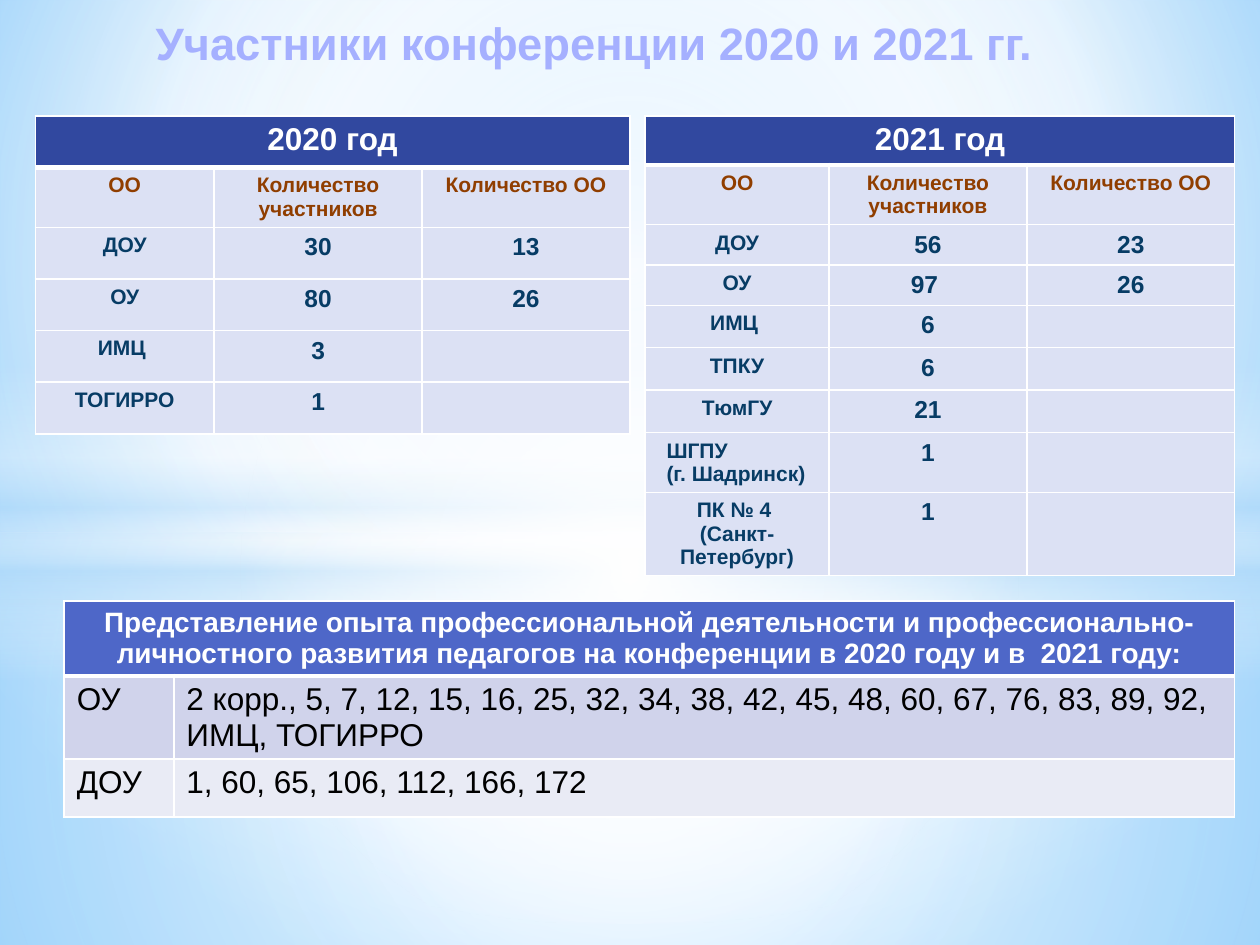
"""Builds the slide that compares conference participants in 2020 and 2021."""
from lxml import etree
from pptx import Presentation
from pptx.dml.color import RGBColor
from pptx.enum.shapes import MSO_SHAPE
from pptx.enum.text import MSO_ANCHOR, PP_ALIGN
from pptx.oxml import parse_xml
from pptx.oxml.ns import nsdecls, qn
from pptx.util import Inches, Pt

RECTANGLE, OVAL = MSO_SHAPE.RECTANGLE, MSO_SHAPE.OVAL
LEFT, CENTER = PP_ALIGN.LEFT, PP_ALIGN.CENTER
TOP, MIDDLE, BOTTOM = MSO_ANCHOR.TOP, MSO_ANCHOR.MIDDLE, MSO_ANCHOR.BOTTOM

COLORS = {
    "white": "FFFFFF", "black": "000000", "sky": "B4DCFA",
    "light_blue": "9ED5FF", "bright_blue": "5BB9FF", "title": "A5B0FF",
    "year": "31489F", "cell": "DCE1F4", "heading": "903E00", "value": "073C65",
    "summary": "4E67C8", "band_dark": "D0D3EB", "band_light": "E9EBF5",
}
CENTERED = (50, 50, 50, 50)


class SlideBuilder:
    """Holds the style and the current slide and adds each kind of element."""

    def __init__(self, presentation, font_name):
        self.font_name = font_name
        self.slide = presentation.slides.add_slide(presentation.slide_layouts[5])

    def gradient(self, stops, focus=None):
        colors = "".join(
            f'<a:gs pos="{position * 1000}"><a:srgbClr val="{COLORS[color]}">'
            f'<a:alpha val="{opacity * 1000}"/></a:srgbClr></a:gs>'
            for position, color, opacity in stops)
        direction = '<a:lin ang="5400000" scaled="0"/>'
        if focus:
            sides = " ".join(f'{side}="{share * 1000}"' for side, share in zip("ltrb", focus))
            direction = f'<a:path path="circle"><a:fillToRect {sides}/></a:path>'
        return parse_xml(f'<a:gradFill {nsdecls("a")} rotWithShape="1">'
                         f'<a:gsLst>{colors}</a:gsLst>{direction}</a:gradFill>')

    def apply_gradient(self, fill, owner, stops, focus):
        fill.gradient()
        old_fill = next(owner.iter(qn("a:gradFill")))
        old_fill.getparent().replace(old_fill, self.gradient(stops, focus))

    def background(self, stops, focus):
        self.apply_gradient(self.slide.background.fill, self.slide.element, stops, focus)

    def glow(self, preset, box, stops, focus=None):
        shape = self.slide.shapes.add_shape(preset, *map(Inches, box))
        shape.shadow.inherit = False
        shape.line.fill.background()
        self.apply_gradient(shape.fill, shape.element, stops, focus)

    def set_text(self, text_frame, text, size, color, bold=True, alignment=CENTER):
        text_frame.text = text
        formats = {"name": self.font_name, "size": Pt(size), "bold": bold}
        for paragraph in text_frame.paragraphs:
            paragraph.alignment = alignment
            for run in paragraph.runs:
                for name, value in formats.items():
                    setattr(run.font, name, value)
                run.font.color.rgb = RGBColor.from_string(COLORS[color])
            if not paragraph.runs:
                paragraph._p.get_or_add_endParaRPr().set("sz", str(size * 100))

    def title(self, text, box, size):
        title = self.slide.shapes.title
        for name, value in zip(("left", "top", "width", "height"), box):
            setattr(title, name, Inches(value))
        self.slide.shapes.element.append(title.element)
        self.set_text(title.text_frame, text, size, "title")
        title.text_frame.vertical_anchor = BOTTOM
        title.text_frame.paragraphs[0].space_after = Pt(3)

    def table(self, left, top, columns, rows):
        shape = self.slide.shapes.add_table(
            len(rows), len(columns), Inches(left), Inches(top),
            Inches(sum(columns)), Inches(sum(rows)))
        for column, width in zip(shape.table.columns, columns):
            column.width = Inches(width)
        for row, height in zip(shape.table.rows, rows):
            row.height = Inches(height)
        shape.table.cell(0, 0).merge(shape.table.cell(0, len(columns) - 1))
        return shape.table

    def cell(self, cell, fill, text, *style, bottom=1, anchor=TOP, **options):
        self.set_text(cell.text_frame, text, *style, **options)
        cell.vertical_anchor = anchor
        properties = cell._tc.get_or_add_tcPr()
        for side in "LRTB":
            line = etree.SubElement(properties, qn(f"a:ln{side}"),
                                    w=str(Pt(bottom if side == "B" else 1)))
            solid = etree.SubElement(line, qn("a:solidFill"))
            etree.SubElement(solid, qn("a:srgbClr"), val=COLORS["white"])
        cell.fill.solid()
        cell.fill.fore_color.rgb = RGBColor.from_string(COLORS[fill])

    def header(self, table, fill, text, size, anchor=TOP):
        for cell in table.rows[0].cells:
            self.cell(cell, fill, "" if cell.is_spanned else text, size, "white",
                      bottom=3, anchor=anchor)

    def year_table(self, year, left, columns, rows, records):
        table = self.table(left, 0.92, columns, rows)
        self.header(table, "year", year, 18)
        headings = ("ОО", "Количество участников", "Количество ОО")
        for cell, text in zip(table.rows[1].cells, headings):
            self.cell(cell, "cell", text, 12, "heading")
        for row, record in enumerate(records, 2):
            for column, text in enumerate(record):
                self.cell(table.cell(row, column), "cell", text,
                          14 if column else 12, "value")
        return table

    def summary_table(self, text, records):
        table = self.table(0.51, 4.77, (0.87, 8.42), (0.59, 0.66, 0.46))
        self.header(table, "summary", text, 16, MIDDLE)
        for row, (fill, *record) in enumerate(records, 1):
            for column, value in enumerate(record):
                self.cell(table.cell(row, column), fill, value, 18, "black",
                          bold=False, alignment=LEFT)


def main():
    presentation = Presentation()
    presentation.slide_width, presentation.slide_height = Inches(10), Inches(7.5)
    builder = SlideBuilder(presentation, "Arial")

    builder.background([(0, "light_blue", 100), (60, "white", 100),
                        (100, "bright_blue", 100)], (20, 10, 20, 60))
    builder.glow(RECTANGLE, (0, 4.23, 10, 3.27),
                 [(0, "white", 92), (37, "white", 77), (100, "sky", 80)], CENTERED)
    builder.glow(RECTANGLE, (0, 0, 10, 4.23),
                 [(0, "white", 90), (48, "white", 63), (100, "sky", 80)], CENTERED)
    builder.glow(RECTANGLE, (0, 2.9, 10, 2.5),
                 [(0, "white", 0), (29, "white", 30), (45, "sky", 40),
                  (55, "white", 26), (65, "sky", 60), (100, "white", 0)])
    builder.glow(OVAL, (0, 1.75, 10, 5.58),
                 [(0, "white", 100), (54, "white", 0)], CENTERED)

    builder.title("Участники конференции 2020 и 2021 гг. ", (0.59, 0.13, 8.35, 0.47), 25.9)
    builder.summary_table(
        "Представление опыта профессиональной деятельности и профессионально-личностного "
        "развития педагогов на конференции в 2020 году и в  2021 году:",
        [("band_dark", "ОУ", "2 корр., 5, 7, 12, 15, 16, 25, 32, 34, 38, 42, 45, 48, "
          "60, 67, 76, 83, 89, 92, ИМЦ, ТОГИРРО"),
         ("band_light", "ДОУ", "1, 60, 65, 106, 112, 166, 172")])
    builder.year_table(
        "2020 год", 0.28, (1.42, 1.65, 1.65), [0.41, 0.47] + [0.41] * 4,
        [("ДОУ", "30", "13"), ("ОУ", "80", "26"), ("ИМЦ ", "3", ""), ("ТОГИРРО", "1", "")])
    table = builder.year_table(
        "2021 год", 5.12, (1.46, 1.57, 1.65), [0.39, 0.47] + [0.32] * 5 + [0.47, 0.66],
        [("ДОУ", "56", "23"), ("ОУ", "97 ", "26"), ("ИМЦ ", "6", ""),
         ("ТПКУ", "6", ""), ("ТюмГУ", "21", ""), ("ШГПУ\n(г. Шадринск)", "1", ""),
         ("ПК № 4 \n(Санкт-Петербург)", "1", "")])
    university = table.cell(7, 0)
    university.margin_left = Inches(0.17)
    for paragraph in university.text_frame.paragraphs:
        paragraph.alignment = LEFT

    presentation.save("out.pptx")


if __name__ == "__main__":
    main()
